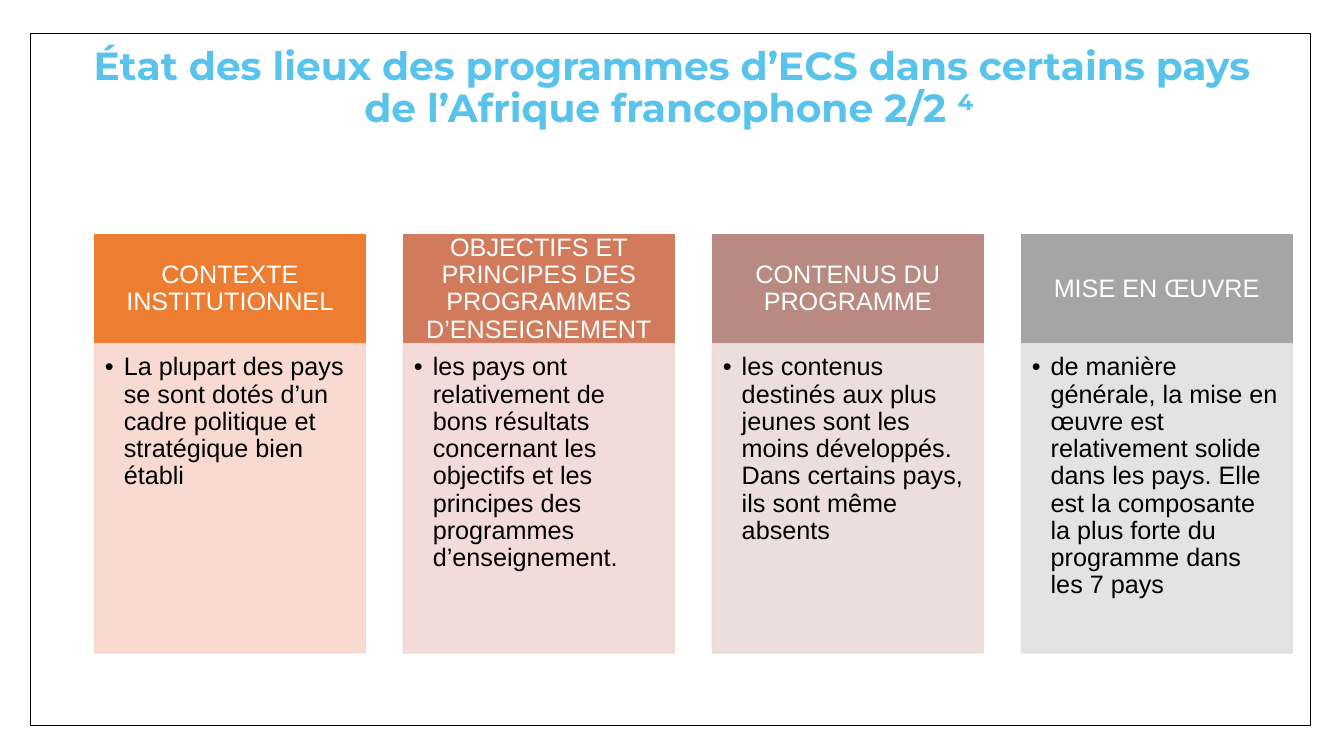
from lxml.etree import SubElement
from pptx import Presentation
from pptx.dml.color import RGBColor
from pptx.enum.shapes import MSO_SHAPE
from pptx.enum.text import MSO_ANCHOR, MSO_AUTO_SIZE, PP_ALIGN
from pptx.oxml.ns import qn
from pptx.util import Pt

BLACK = RGBColor(0x00, 0x00, 0x00)
WHITE = RGBColor(0xFF, 0xFF, 0xFF)
SKY = RGBColor(0x58, 0xC3, 0xEB)
ORANGE = RGBColor(0xED, 0x7D, 0x31)
PALE_ORANGE = RGBColor(0xF8, 0xD7, 0xCE)
TERRACOTTA = RGBColor(0xD1, 0x7B, 0x5C)
PALE_TERRACOTTA = RGBColor(0xF1, 0xD8, 0xD4)
ROSE = RGBColor(0xB9, 0x8A, 0x82)
PALE_ROSE = RGBColor(0xE9, 0xDB, 0xDA)
GREY = RGBColor(0xA5, 0xA5, 0xA5)
PALE_GREY = RGBColor(0xE1, 0xE1, 0xE1)

COLUMNS = [
    ("CONTEXTE INSTITUTIONNEL",
     "La plupart des pays se sont dotés d’un cadre politique et stratégique bien établi",
     ORANGE, PALE_ORANGE),
    ("OBJECTIFS ET PRINCIPES DES PROGRAMMES D’ENSEIGNEMENT",
     "les pays ont relativement de bons résultats concernant les objectifs et les "
     "principes des programmes d’enseignement.",
     TERRACOTTA, PALE_TERRACOTTA),
    ("CONTENUS DU PROGRAMME",
     "les contenus destinés aux plus jeunes sont les moins développés. "
     "Dans certains pays, ils sont même absents",
     ROSE, PALE_ROSE),
    ("MISE EN ŒUVRE",
     "de manière générale, la mise en œuvre est relativement solide dans les pays. "
     "Elle est la composante la plus forte du programme dans les 7 pays",
     GREY, PALE_GREY),
]


def add_rectangle(slide, left, top, width, height, fill, line, line_width):
    shape = slide.shapes.add_shape(
        MSO_SHAPE.RECTANGLE, Pt(left), Pt(top), Pt(width), Pt(height))
    shape.shadow.inherit = False
    if fill is None:
        shape.fill.background()
    else:
        shape.fill.solid()
        shape.fill.fore_color.rgb = fill
    shape.line.color.rgb = line
    shape.line.width = Pt(line_width)
    return shape


def set_margins(frame, left, top, right, bottom):
    frame.margin_left, frame.margin_top = Pt(left), Pt(top)
    frame.margin_right, frame.margin_bottom = Pt(right), Pt(bottom)


def write_text(shape, text, color, align, anchor):
    frame = shape.text_frame
    frame.word_wrap = True
    frame.vertical_anchor = anchor
    frame.text = text
    paragraph = frame.paragraphs[0]
    paragraph.alignment = align
    paragraph.line_spacing = 0.9
    font = paragraph.runs[0].font
    font.name, font.size, font.color.rgb = "Arial", Pt(18), color
    return paragraph


def add_bullet(paragraph, indent):
    properties = paragraph._p.get_or_add_pPr()
    properties.set("marL", str(Pt(indent)))
    properties.set("indent", str(-Pt(indent)))
    SubElement(properties, qn("a:buFont"), typeface="Arial")
    SubElement(properties, qn("a:buChar"), char="•")


def make_translucent(shape, percent):
    for color in shape._element.spPr.iter(qn("a:srgbClr")):
        SubElement(color, qn("a:alpha"), val=str(percent * 1000))


def add_title(slide, left, top, width, height):
    title = slide.shapes.title
    title.left, title.top = Pt(left), Pt(top)
    title.width, title.height = Pt(width), Pt(height)
    frame = title.text_frame
    frame.word_wrap = True
    frame.auto_size = MSO_AUTO_SIZE.NONE
    frame.vertical_anchor = MSO_ANCHOR.TOP
    frame.text = ("État des lieux des programmes d’ECS dans certains pays "
                  "de l’Afrique francophone 2/2 ")
    paragraph = frame.paragraphs[0]
    paragraph.alignment = PP_ALIGN.CENTER
    paragraph.line_spacing = 0.9
    note_mark = paragraph.add_run()
    note_mark.text = "4 "
    for run in paragraph.runs:
        font = run.font
        font.name, font.size, font.bold = "Montserrat", Pt(28), True
        font.color.rgb = SKY
    note_mark.font._element.set("baseline", "30000")


def add_column(slide, left, top, width, height, column):
    heading, finding, color, pale_color = column
    header_height = 78
    header = add_rectangle(slide, left, top, width, header_height, color, color, 1)
    set_margins(header.text_frame, 10, 5.75, 10, 5.75)
    write_text(header, heading, WHITE, PP_ALIGN.CENTER, MSO_ANCHOR.MIDDLE)

    body = add_rectangle(slide, left, top + header_height, width,
                         height - header_height, pale_color, pale_color, 1)
    make_translucent(body, 90)
    set_margins(body.text_frame, 7.5, 7.5, 10, 11.25)
    paragraph = write_text(body, finding, BLACK, PP_ALIGN.LEFT, MSO_ANCHOR.TOP)
    add_bullet(paragraph, 13.5)


def add_columns(slide, left, top, width, height):
    column_width = 193.5
    step = (width - column_width) / (len(COLUMNS) - 1)
    for index, column in enumerate(COLUMNS):
        add_column(slide, left + index * step, top, column_width, height, column)


def main():
    presentation = Presentation()
    presentation.slide_width, presentation.slide_height = Pt(960), Pt(540)
    slide = presentation.slides.add_slide(presentation.slide_layouts[5])
    add_rectangle(slide, 21.6, 24, 914.4, 494, None, BLACK, 0.75)
    add_title(slide, 52, 29.5, 856, 80.5)
    add_columns(slide, 67.5, 167.5, 855.5, 299)
    presentation.save("out.pptx")


if __name__ == "__main__":
    main()
